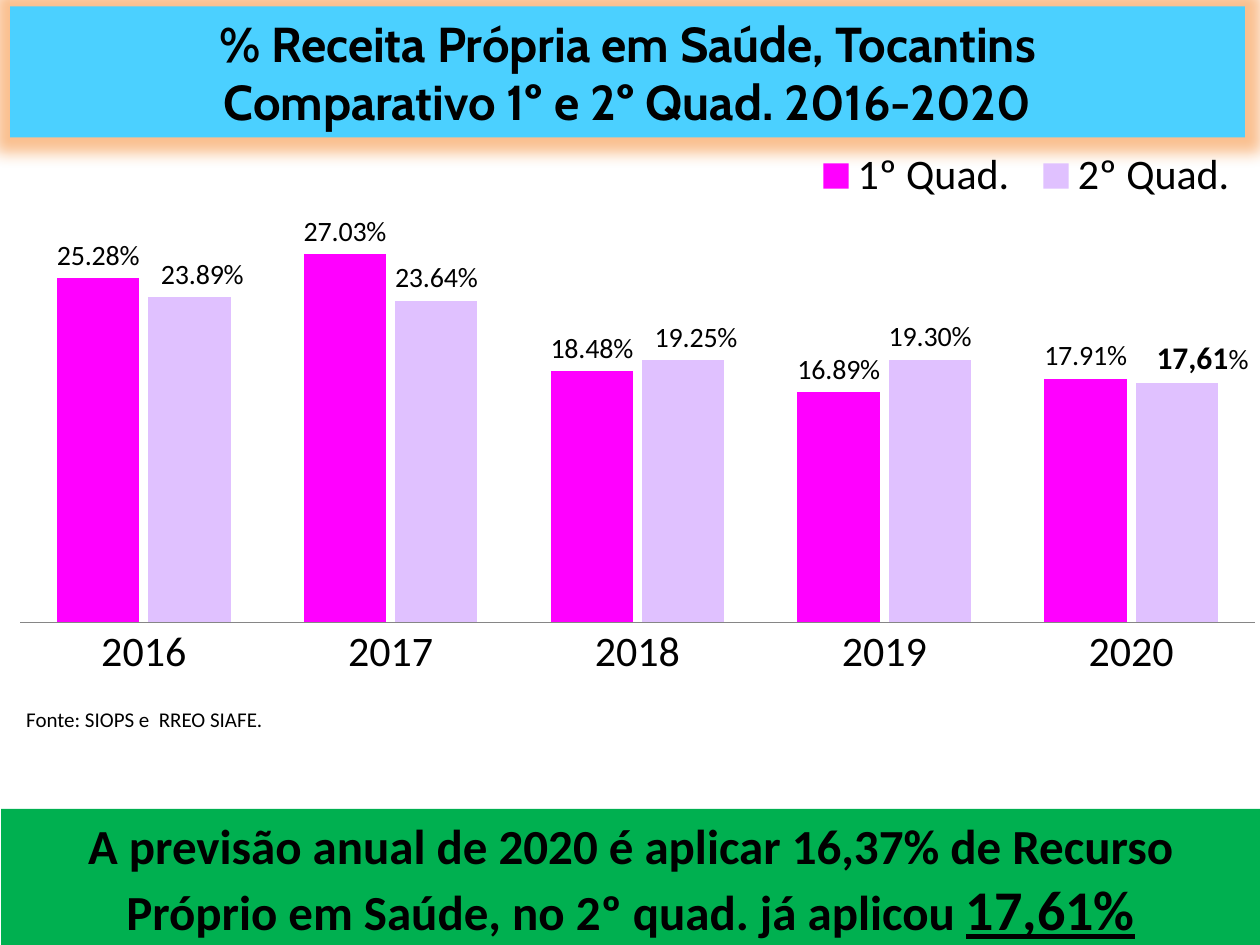
import pptx
import pptx.chart.data
import pptx.dml.color
import pptx.enum.chart
import pptx.enum.shapes
import pptx.enum.text
import pptx.oxml
import pptx.oxml.ns
import pptx.util

Inches, Pt = pptx.util.Inches, pptx.util.Pt
Align = pptx.enum.text.PP_ALIGN
Anchor = pptx.enum.text.MSO_ANCHOR
NS = pptx.oxml.ns.nsdecls
COLORS = {"text": "000000", "sky": "4BD0FF", "glow": "F79646", "green": "00B050",
          "pink": "FF00FF", "lilac": "E0C1FF", "axis": "868686"}


def rgb(name):
    return pptx.dml.color.RGBColor.from_string(COLORS[name])


def add_run(para, text, size, face="Calibri", bold=False, line=False):
    run = para.add_run()
    run.text = text
    font = run.font
    font.size, font.name, font.bold, font.underline = Pt(size), face, bold, line
    font.color.rgb = rgb("text")


deck = pptx.Presentation()
deck.slide_width, deck.slide_height = Inches(10), Inches(7.5)
slide = deck.slides.add_slide(deck.slide_layouts[5])

# Title band with a soft orange glow
title = slide.shapes.title
title.left, title.top = Inches(0.08), Inches(0.05)
title.width, title.height = Inches(9.8), Inches(1.04)
title.fill.solid()
title.fill.fore_color.rgb = rgb("sky")
title.line.fill.background()
title.element.spPr.append(pptx.oxml.parse_xml(
    f'<a:effectLst {NS("a")}><a:glow rad="{Inches(0.25)}">'
    f'<a:srgbClr val="{COLORS["glow"]}"><a:alpha val="60000"/></a:srgbClr>'
    '</a:glow></a:effectLst>'))
frame = title.text_frame
frame.auto_size = pptx.enum.text.MSO_AUTO_SIZE.NONE
frame.vertical_anchor = Anchor.MIDDLE
lines = ["% Receita Própria em Saúde, Tocantins", "Comparativo 1º e 2º Quad. 2016-2020"]
for i, text in enumerate(lines):
    para = frame.add_paragraph() if i else frame.paragraphs[0]
    para.alignment = Align.CENTER
    para.space_before = Pt(0)
    add_run(para, text, 28, "Cabin", True)

# Source note
note = slide.shapes.add_textbox(Inches(0.11), Inches(5.56), Inches(2.83), Inches(0.3))
note.text_frame.word_wrap = True
para = note.text_frame.paragraphs[0]
para.alignment = Align.JUSTIFY
add_run(para, "Fonte: SIOPS e  RREO SIAFE.", 12)

# Column chart
data = pptx.chart.data.CategoryChartData(number_format="0.00%")
data.categories = ["2016", "2017", "2018", "2019", "2020"]
data.add_series("1º Quad.", [0.2528, 0.2703, 0.1848, 0.1689, 0.1791])
data.add_series("2º Quad.", [0.2389, 0.2364, 0.1925, 0.193, 0.1761])
chart = slide.shapes.add_chart(
    pptx.enum.chart.XL_CHART_TYPE.COLUMN_CLUSTERED,
    Inches(0), Inches(1.09), Inches(10.12), Inches(4.72), data).chart
chart.has_title = False
chart.font.name, chart.font.size = "Calibri", Pt(10)
chart.font.color.rgb = rgb("text")

cat = chart.category_axis
cat.major_tick_mark = pptx.enum.chart.XL_TICK_MARK.NONE
cat.tick_labels.font.size = Pt(24)
cat.format.line.color.rgb = rgb("axis")
val = chart.value_axis
val.minimum_scale, val.maximum_scale = 0, 0.3
val.has_major_gridlines = False
val.tick_labels.number_format = "0.00%"
val.tick_labels.number_format_is_linked = False
val.visible = False

chart.has_legend = True
legend = chart.legend
legend.position = pptx.enum.chart.XL_LEGEND_POSITION.TOP
legend.include_in_layout = False
legend.font.size = Pt(24)

plot = chart.plots[0]
plot.gap_width, plot.overlap = 89, -11
plot.vary_by_categories = False
spot = pptx.enum.chart.XL_LABEL_POSITION.OUTSIDE_END
for ser, color in zip(plot.series, ["pink", "lilac"]):
    ser.format.fill.solid()
    ser.format.fill.fore_color.rgb = rgb(color)
    labels = ser.data_labels
    labels.show_value = True
    labels.number_format, labels.number_format_is_linked = "0.00%", False
    labels.position = spot
    labels.font.size = Pt(16)

# Labels of the second series that are nudged to the right
shifts = {0: 0.01, 2: 0.01, 4: 0.02}
second = plot.series[1]
for i in shifts:
    label = second.points[i].data_label
    if i == 4:
        para = label.text_frame.paragraphs[0]
        add_run(para, "17,61", 18, bold=True)
        add_run(para, "%", 16)
    else:
        label.font.size = Pt(16)
    label.position = spot

# Manual layouts: plot area, legend and nudged labels
root = chart.element if hasattr(chart, "element") else chart._chartSpace
places = [
    (root.xpath("c:chart/c:plotArea")[0], 0,
     {"layoutTarget": "inner", "xMode": "edge", "yMode": "edge",
      "x": 0.016, "y": 0.129, "w": 0.968, "h": 0.687}),
    (root.xpath("c:chart/c:legend")[0], 1,
     {"xMode": "edge", "yMode": "edge", "x": 0.63, "y": 0.02, "w": 0.35, "h": 0.09}),
]
for dot, shift in zip(root.xpath(".//c:dLbl"), shifts.values()):
    places.append((dot, 1, {"x": shift, "y": 0}))
for node, index, rules in places:
    for old in node.xpath("c:layout"):
        node.remove(old)
    inner = "".join(f'<c:{key} val="{value}"/>' for key, value in rules.items())
    node.insert(index, pptx.oxml.parse_xml(
        f'<c:layout {NS("c")}><c:manualLayout>{inner}</c:manualLayout></c:layout>'))

# Green forecast band
band = slide.shapes.add_shape(
    pptx.enum.shapes.MSO_SHAPE.RECTANGLE,
    Inches(0.01), Inches(6.42), Inches(9.99), Inches(1.11))
band.shadow.inherit = False
band.fill.solid()
band.fill.fore_color.rgb = rgb("green")
band.line.fill.background()
band.text_frame.word_wrap = True
band.text_frame.vertical_anchor = Anchor.MIDDLE
para = band.text_frame.paragraphs[0]
para.alignment = Align.CENTER
add_run(para, "A previsão anual de 2020 é aplicar 16,37% de Recurso Próprio em Saúde, "
        "no 2º quad. já aplicou ", 28, bold=True)
add_run(para, "17,61%", 32, bold=True, line=True)

deck.save("out.pptx")
